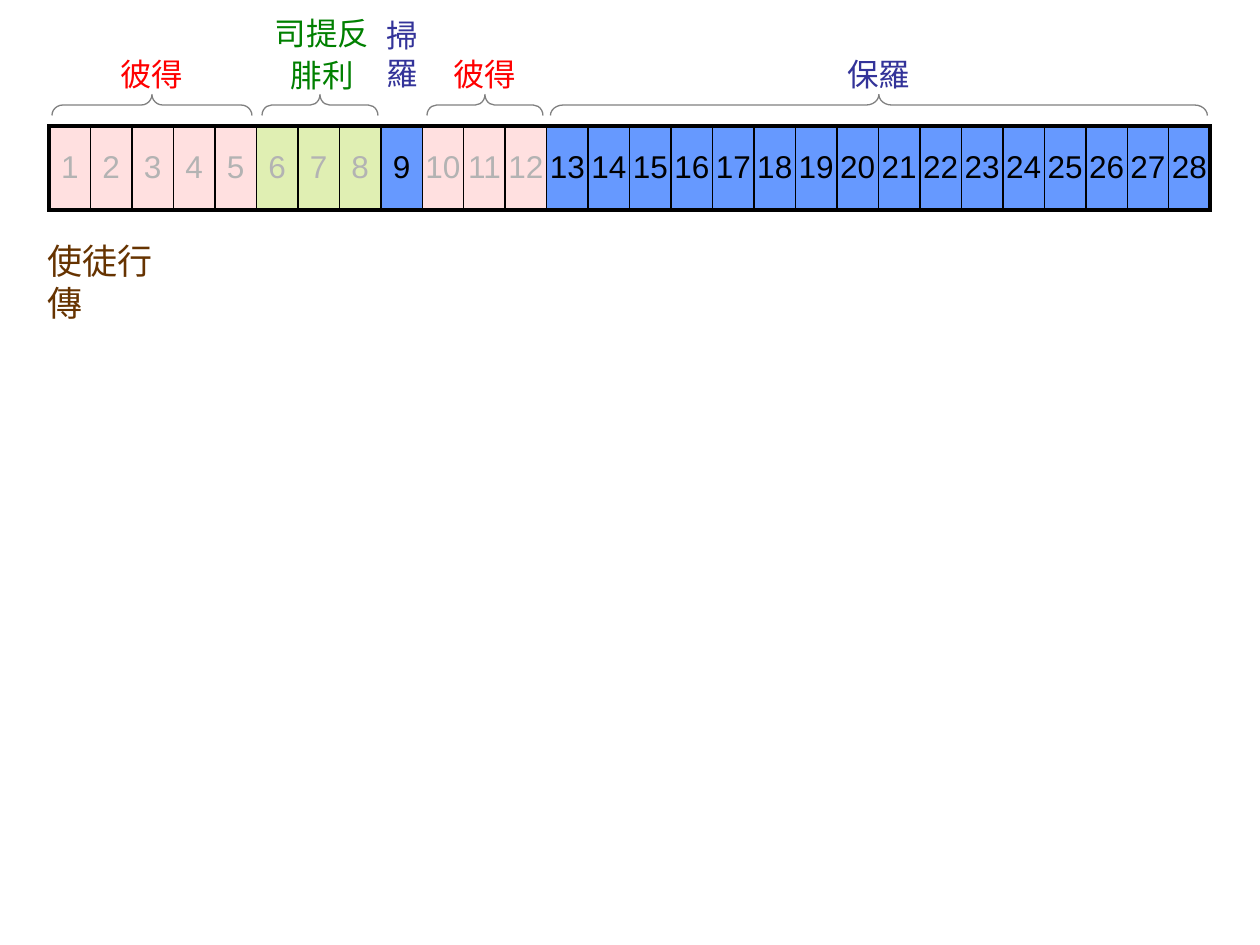
"""Build a slide charting the main figures across the 28 chapters of Acts."""
from lxml import etree
from pptx import Presentation
from pptx.dml.color import RGBColor
from pptx.enum.shapes import MSO_SHAPE
from pptx.enum.text import MSO_ANCHOR, PP_ALIGN
from pptx.oxml.ns import qn
from pptx.util import Pt

EMU = 914400 / 126
LEFT, CENTER, MIDDLE = PP_ALIGN.LEFT, PP_ALIGN.CENTER, MSO_ANCHOR.MIDDLE
BRACE = MSO_SHAPE.RIGHT_BRACE
COLORS = {
    "black": "000000", "white": "FFFFFF", "gray": "808080",
    "pink": "FF9999", "lime": "99CC00", "blue": "6699FF",
    "red": "FF0000", "green": "008000", "navy": "333399", "brown": "663300",
}
CHAPTERS = 28
FILLS = ["pink"] * 5 + ["lime"] * 3 + ["blue"] + ["pink"] * 3 + ["blue"] * 16
PAUL_START = 13
SAUL_CHAPTER = 9


def px(*values):
    return [round(v * EMU) for v in values]


def write(tf, lines, color, size, align, spacing):
    for i, line in enumerate(lines):
        p = tf.add_paragraph() if i else tf.paragraphs[0]
        p.alignment = align
        p.line_spacing = spacing
        r = p.add_run()
        r.text = line
        for name, value in {"name": "Arial", "size": Pt(size), "bold": False}.items():
            setattr(r.font, name, value)
        r.font.color.rgb = RGBColor.from_string(COLORS[color])


prs = Presentation()
prs.slide_width, prs.slide_height = px(1260, 945)
s = prs.slides.add_slide(prs.slide_layouts[6])

cell_format = {"margin_left": 0, "margin_right": 0, "margin_top": 0,
               "margin_bottom": 0, "vertical_anchor": MIDDLE}
for overlay in (False, True):
    table = s.shapes.add_table(1, CHAPTERS, *px(49, 126, 1162, 84)).table
    table.first_row = table.horz_banding = False
    for chapter, color in enumerate(FILLS, 1):
        table.columns[chapter - 1].width = px(1162 / CHAPTERS)[0]
        cell = table.cell(0, chapter - 1)
        for name, value in cell_format.items():
            setattr(cell, name, value)
        tcPr = cell._tc.get_or_add_tcPr()
        borders = {"lnL": 2.25 if chapter == 1 else 1,
                   "lnR": 2.25 if chapter == CHAPTERS else 1,
                   "lnT": 2.25, "lnB": 2.25}
        for side, width in borders.items():
            ln = etree.SubElement(tcPr, qn(f"a:{side}"), w=str(Pt(width)))
            solid = etree.SubElement(ln, qn("a:solidFill"))
            etree.SubElement(solid, qn("a:srgbClr"), val=COLORS["black"])
        veiled = overlay and chapter < PAUL_START
        if veiled and chapter == SAUL_CHAPTER:
            cell.fill.background()
            continue
        cell.fill.solid()
        cell.fill.fore_color.rgb = RGBColor.from_string(COLORS["white" if veiled else color])
        if veiled:
            clr = tcPr.find(".//" + qn("a:solidFill") + "[last()]")
            clr = tcPr.find(qn("a:solidFill")).find(qn("a:srgbClr"))
            etree.SubElement(clr, qn("a:alpha"), val="70000")
        else:
            write(cell.text_frame, [str(chapter)], "black", 18, CENTER, None)

labels = [
    ((108, 45, 88, 54), ["彼得"], "red", 18, CENTER, 1.1),
    ((262, 4, 120, 96), ["司提反", "腓利"], "green", 18, CENTER, 1.1),
    ((835, 45, 88, 54), ["保羅"], "navy", 18, CENTER, 1.1),
    ((441, 45, 88, 54), ["彼得"], "red", 18, CENTER, 1.1),
    ((374, 10, 57, 88), ["掃", "羅"], "navy", 18, LEFT, None),
    ((35, 233, 165, 54), ["使徒行傳"], "brown", 20, LEFT, None),
]
for box, lines, color, size, align, spacing in labels:
    tf = s.shapes.add_textbox(*px(*box)).text_frame
    tf.word_wrap = False
    write(tf, lines, color, size, align, spacing)

BRACE_DEPTH, BRACE_MIDDLE = 21, 105
for center, span, curve in [(152, 200, 0.52), (320, 116, 0.46),
                            (485, 116, 0.46), (879, 657, 0.61)]:
    sp = s.shapes.add_shape(BRACE, *px(center - BRACE_DEPTH / 2, BRACE_MIDDLE - span / 2,
                                       BRACE_DEPTH, span))
    sp.rotation = 270
    sp.adjustments[0] = curve
    sp.shadow.inherit = False
    sp.fill.background()
    sp.line.color.rgb = RGBColor.from_string(COLORS["gray"])
    sp.line.width = Pt(0.75)

prs.save("out.pptx")
